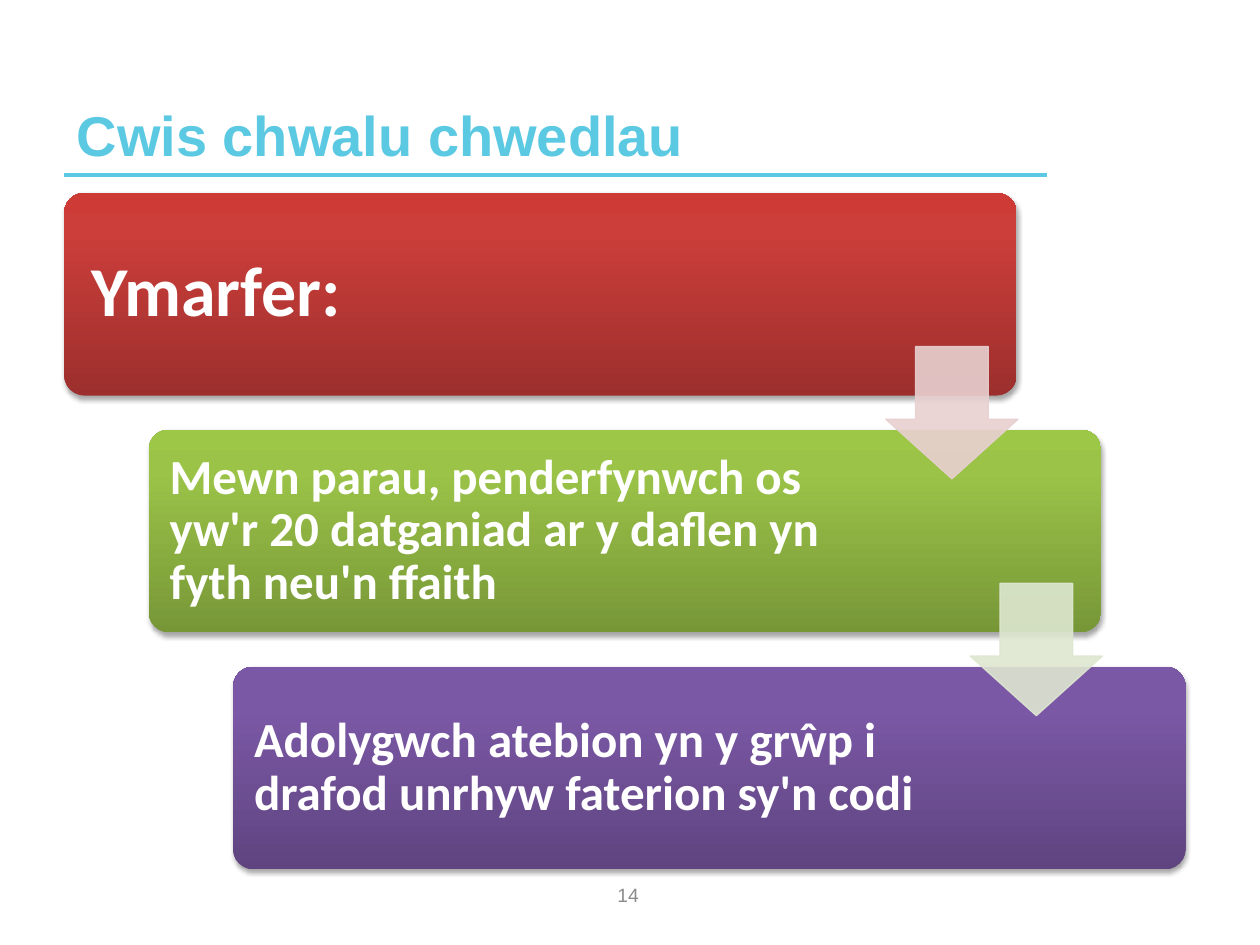
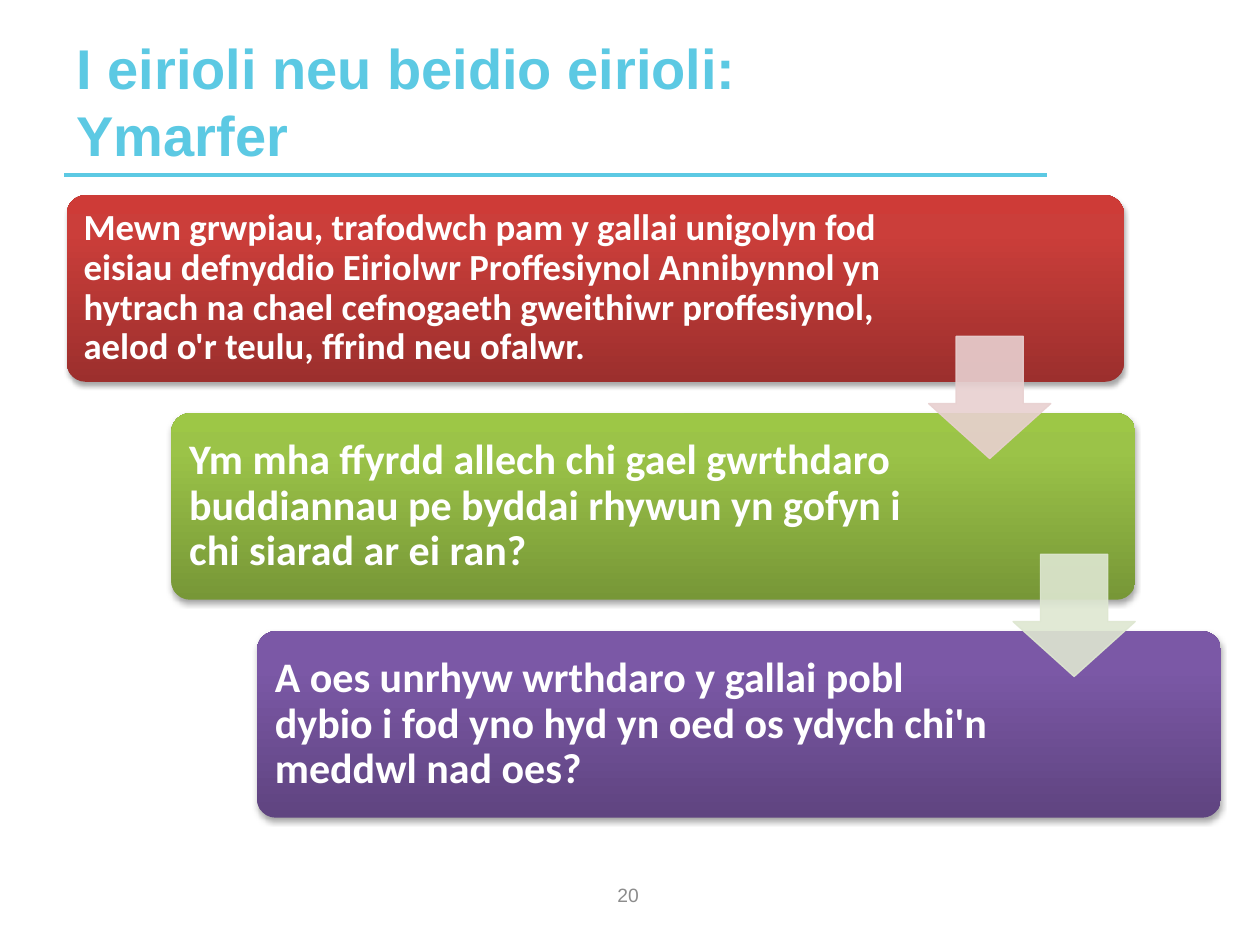
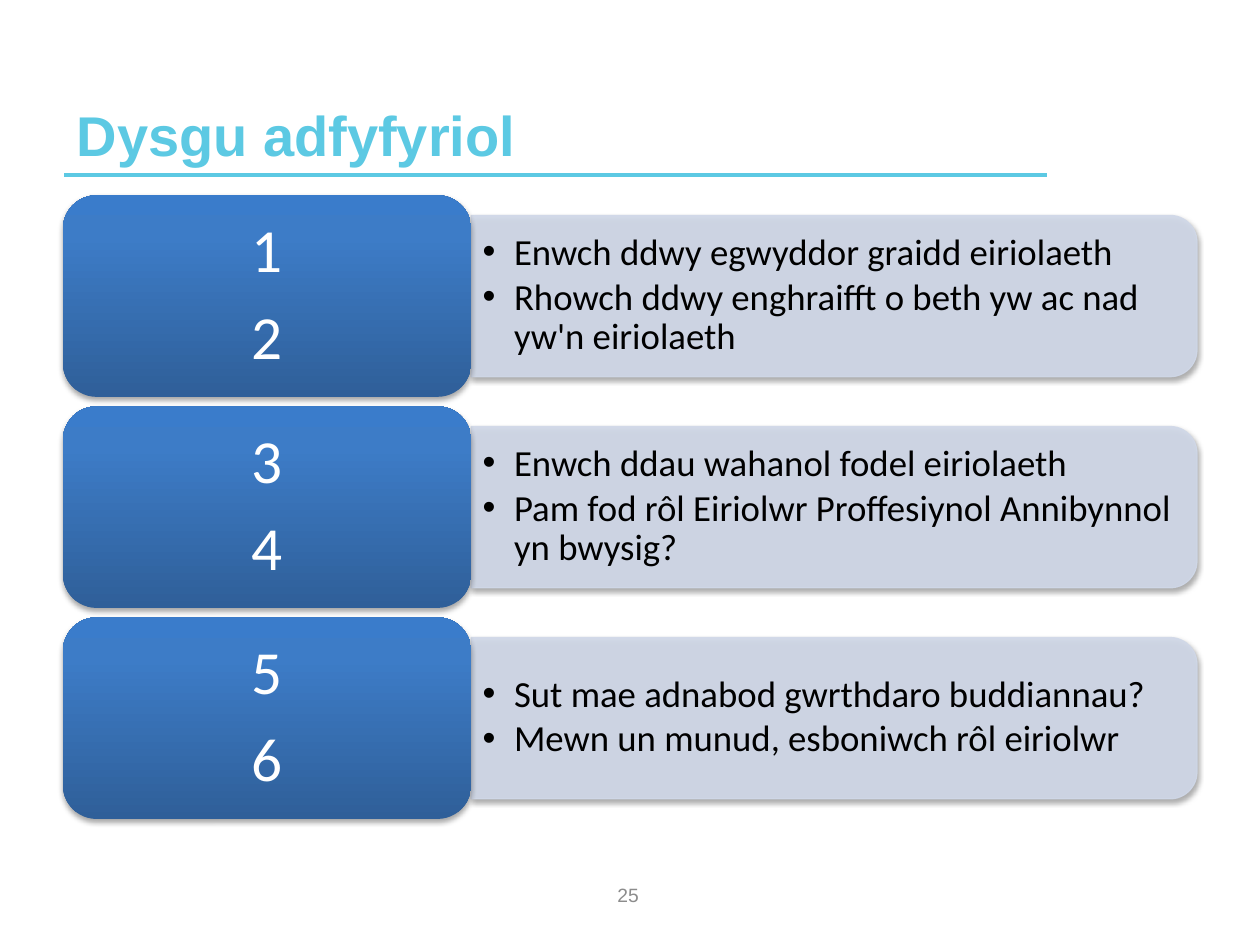
from lxml import etree
from pptx import Presentation
from pptx.dml.color import RGBColor
from pptx.enum.shapes import MSO_CONNECTOR, MSO_SHAPE
from pptx.enum.text import MSO_ANCHOR, PP_ALIGN
from pptx.oxml.ns import qn
from pptx.util import Inches, Pt

LEFT, CENTER = PP_ALIGN.LEFT, PP_ALIGN.CENTER
MIDDLE, BOTTOM = MSO_ANCHOR.MIDDLE, MSO_ANCHOR.BOTTOM
ROUNDED, ROUNDED_TOP = MSO_SHAPE.ROUNDED_RECTANGLE, MSO_SHAPE.ROUND_2_SAME_RECTANGLE
DOWN_ARROW, STRAIGHT = MSO_SHAPE.DOWN_ARROW, MSO_CONNECTOR.STRAIGHT

# Shared colours: gradients run from the bottom (0 %) to the top (100 %)
color = RGBColor.from_string
SKY, GREY, WHITE, BLACK = "5CC9E3", "8C8C8C", "FFFFFF", "000000"
RED = ("9C2F2D", "CB3E3A", "CE3B37")
GREEN = ("779737", "9BC348", "9DC746")
PURPLE = ("5F4480", "7B58A6", "7C57A8")
BLUE = ("2F5F99", "3D7CC7", "3A7CCB")
PALE_RED, PALE_GREEN, PALE_BLUE = "E8D0D0", "DEE7D1", "D0D8E8"


def write(shape, lines, size, hex_color, font="Calibri", bold=False, align=LEFT,
          anchor=MIDDLE, margins=(0.1, 0.05, 0.1, 0.05), spacing=None,
          after=0, bullet=False):
    frame = shape.text_frame
    frame.word_wrap = True
    frame.vertical_anchor = anchor
    (frame.margin_left, frame.margin_top,
     frame.margin_right, frame.margin_bottom) = map(Inches, margins)
    frame.text = "\n".join(lines)
    for para in frame.paragraphs:
        if bullet:
            properties = para._p.get_or_add_pPr()
            properties.set("marL", str(Inches(0.25)))
            properties.set("indent", str(Inches(-0.25)))
            etree.SubElement(properties, qn("a:buFont"), typeface="Arial")
            etree.SubElement(properties, qn("a:buChar"), char="•")
        para.alignment = align
        para.line_spacing = spacing
        para.space_after = Pt(after)
        for span in para.runs:
            span.font.name = font
            span.font.size = Pt(size)
            span.font.bold = bold
            span.font.color.rgb = color(hex_color)


def add_block(page, kind, left, top, width, height, paint, shadow=True):
    """Paint is a gradient of three colours, or one translucent colour."""
    shape = page.shapes.add_shape(kind, Inches(left), Inches(top),
                                  Inches(width), Inches(height))
    shape.shadow.inherit = False
    properties = shape._element.spPr
    if isinstance(paint, str):
        shape.fill.solid()
        shape.fill.fore_color.rgb = color(paint)
        shape.line.color.rgb = color(paint)
        shape.line.width = Pt(0.75)
        for tone in properties.iter(qn("a:srgbClr")):
            etree.SubElement(tone, qn("a:alpha"), val="90000")
    else:
        shape.line.fill.background()
        shape.fill.gradient()
        gradient = properties.find(qn("a:gradFill"))
        stops = gradient.find(qn("a:gsLst"))
        for stop in list(stops):
            stops.remove(stop)
        for position, tone in zip((0, 80000, 100000), paint):
            stop = etree.SubElement(stops, qn("a:gs"), pos=str(position))
            etree.SubElement(stop, qn("a:srgbClr"), val=tone)
        gradient.find(qn("a:lin")).set("ang", "16200000")
    if shadow:
        outer = etree.SubElement(properties.find(qn("a:effectLst")), qn("a:outerShdw"),
                                 blurRad=str(Pt(3.1)), dist=str(Pt(1.8)),
                                 dir="5400000", rotWithShape="0")
        tone = etree.SubElement(outer, qn("a:srgbClr"), val=BLACK)
        etree.SubElement(tone, qn("a:alpha"), val="35000")
    return shape


deck = Presentation()
deck.slide_width, deck.slide_height = Inches(10), Inches(7.5)

# Title, rule and page number on every slide
pages = []
for title, number in [("Cwis chwalu chwedlau", "14"),
                      ("I eirioli neu beidio eirioli:\vYmarfer", "20"),
                      ("Dysgu adfyfyriol", "25")]:
    page = deck.slides.add_slide(deck.slide_layouts[6])
    rule = page.shapes.add_connector(STRAIGHT, Inches(0.51), Inches(1.39),
                                     Inches(8.31), Inches(1.39))
    rule.line.color.rgb = color(SKY)
    rule.line.width = Pt(2)
    etree.SubElement(rule._element.spPr, qn("a:effectLst"))
    box = page.shapes.add_textbox(Inches(0.51), Inches(0.29), Inches(7.8), Inches(1.09))
    write(box, [title], 32, SKY, font="Arial", bold=True, anchor=BOTTOM)
    box = page.shapes.add_textbox(Inches(3.82), Inches(6.9), Inches(2.33), Inches(0.4))
    write(box, [number], 11, GREY, font="Arial", align=CENTER)
    pages.append(page)
quiz_page, exercise_page, reflection_page = pages

# Stepped cards: left, width, text width, margin, text size, text
quiz_cards = [
    (0.51, 7.56, 5.82, 0.17, 40, "Ymarfer:"),
    (1.18, 7.56, 5.75, 0.12, 28,
     "Mewn parau, penderfynwch os yw'r 20 datganiad ar y daflen yn fyth neu'n ffaith"),
    (1.85, 7.56, 5.75, 0.12, 28,
     "Adolygwch atebion yn y grŵp i drafod unrhyw faterion sy'n codi"),
]
exercise_cards = [
    (0.53, 8.39, 6.64, 0.09, 21,
     "Mewn grwpiau, trafodwch pam y gallai unigolyn fod eisiau defnyddio Eiriolwr "
     "Proffesiynol Annibynnol yn hytrach na chael cefnogaeth gweithiwr proffesiynol, "
     "aelod o'r teulu, ffrind neu ofalwr."),
    (1.36, 7.65, 5.92, 0.1, 24,
     "Ym mha ffyrdd allech chi gael gwrthdaro buddiannau pe byddai rhywun yn gofyn i "
     "chi siarad ar ei ran?"),
    (2.04, 7.65, 5.92, 0.1, 24,
     "A oes unrhyw wrthdaro y gallai pobl dybio i fod yno hyd yn oed os ydych chi'n "
     "meddwl nad oes?"),
]
# Page, cards, first top, step down, card height, first arrow left and top, arrow size
staircases = [
    (quiz_page, quiz_cards, 1.53, 1.88, 1.61, 7.03, 2.75, 1.05),
    (exercise_page, exercise_cards, 1.55, 1.73, 1.48, 7.37, 2.67, 0.97),
]
for page, cards, top, step, height, arrow_left, arrow_top, arrow_size in staircases:
    for row, (card, paint) in enumerate(zip(cards, (RED, GREEN, PURPLE))):
        left, width, text_width, margin, size, text = card
        block = add_block(page, ROUNDED, left, top + row * step, width, height, paint)
        block.adjustments[0] = 0.1
        # The rounded corners already inset the text by 0.05 on each side
        right_margin = width - 0.1 - text_width + margin
        write(block, [text], size, WHITE, bold=True, spacing=0.9, after=0.35 * size,
              margins=(margin, margin, right_margin, margin))
    for row, paint in enumerate((PALE_RED, PALE_GREEN)):
        arrow = add_block(page, DOWN_ARROW, arrow_left + row * 0.67,
                          arrow_top + row * step, arrow_size, arrow_size, paint, shadow=False)
        arrow.adjustments[0], arrow.adjustments[1] = 0.55, 0.45

# Numbered questions, two to a row
question_pairs = [
    ("Enwch ddwy egwyddor graidd eiriolaeth",
     "Rhowch ddwy enghraifft o beth yw ac nad yw'n eiriolaeth"),
    ("Enwch ddau wahanol fodel eiriolaeth",
     "Pam fod rôl Eiriolwr Proffesiynol Annibynnol yn bwysig?"),
    ("Sut mae adnabod gwrthdaro buddiannau?",
     "Mewn un munud, esboniwch rôl eiriolwr"),
]
first_top, last_top = 1.55, 4.9
row_step = (last_top - first_top) / (len(question_pairs) - 1)
for row, questions in enumerate(question_pairs):
    top = first_top + row * row_step
    # The panel is turned a quarter, so its rounded top faces right
    panel = add_block(reflection_page, ROUNDED_TOP, 5.98, top - 2.08, 1.28, 5.76, PALE_BLUE)
    panel.rotation = 90
    box = reflection_page.shapes.add_textbox(Inches(3.74), Inches(top + 0.22),
                                             Inches(5.7), Inches(1.15))
    write(box, questions, 21, BLACK, spacing=0.9, after=3, bullet=True,
          margins=(0.09, 0.04, 0.09, 0.04))
    tile = add_block(reflection_page, ROUNDED, 0.5, top, 3.24, 1.6, BLUE)
    write(tile, [str(2 * row + 1), str(2 * row + 2)], 35, WHITE, align=CENTER,
          spacing=0.9, after=12, margins=(0.15, 0.07, 0.15, 0.07))

deck.save("out.pptx")
